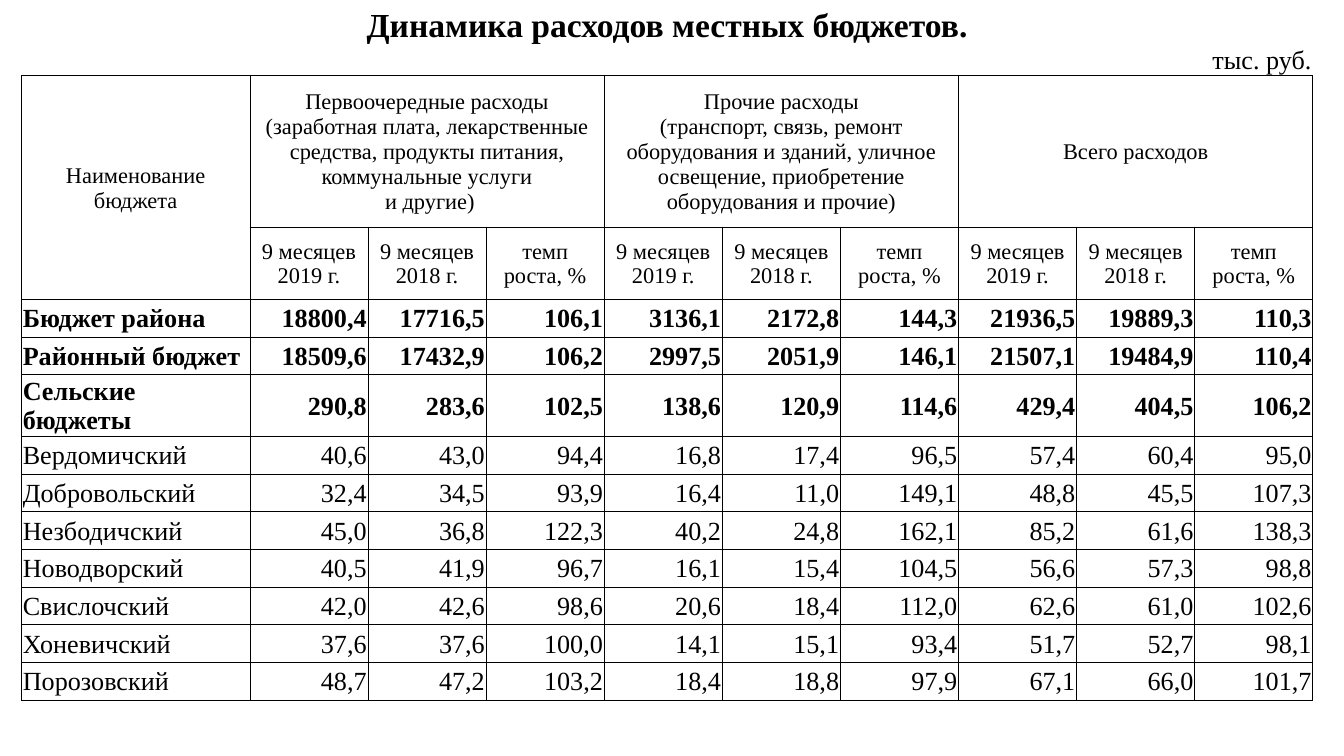
"""Build a slide with a table of local budget spending."""
from lxml import etree
from pptx import Presentation
from pptx.dml.color import RGBColor
from pptx.enum import text
from pptx.oxml import ns
from pptx.util import Inches, Pt

COLORS = {"ink": "000000"}
FONT = "Times New Roman"
TITLE = "Динамика расходов местных бюджетов."
UNITS = "тыс. руб."
NAME_HEADING = "Наименование бюджета"
GROUPS = [
    "Первоочередные расходы (заработная плата, лекарственные средства, "
    "продукты питания, коммунальные услуги\n и другие)",
    "Прочие расходы\n(транспорт, связь, ремонт оборудования и зданий, "
    "уличное освещение, приобретение оборудования и прочие)",
    "Всего расходов",
]
MEASURES = ["9 месяцев 2019 г.", "9 месяцев 2018 г.", "темп\nроста, %"]
TOTALS = [
    ("Бюджет района", "18800,4 17716,5 106,1 3136,1 2172,8 144,3 21936,5 19889,3 110,3"),
    ("Районный бюджет", "18509,6 17432,9 106,2 2997,5 2051,9 146,1 21507,1 19484,9 110,4"),
    ("Сельские бюджеты", "290,8 283,6 102,5 138,6 120,9 114,6 429,4 404,5 106,2"),
]
VILLAGES = [
    ("Вердомичский", "40,6 43,0 94,4 16,8 17,4 96,5 57,4 60,4 95,0"),
    ("Добровольский", "32,4 34,5 93,9 16,4 11,0 149,1 48,8 45,5 107,3"),
    ("Незбодичский", "45,0 36,8 122,3 40,2 24,8 162,1 85,2 61,6 138,3"),
    ("Новодворский", "40,5 41,9 96,7 16,1 15,4 104,5 56,6 57,3 98,8"),
    ("Свислочский", "42,0 42,6 98,6 20,6 18,4 112,0 62,6 61,0 102,6"),
    ("Хоневичский", "37,6 37,6 100,0 14,1 15,1 93,4 51,7 52,7 98,1"),
    ("Порозовский", "48,7 47,2 103,2 18,4 18,8 97,9 67,1 66,0 101,7"),
]
SLIDE_WIDTH = Inches(10)
SLIDE_HEIGHT = SLIDE_WIDTH * 9 // 16
TABLE_WIDTH = Inches(9.61)
NAME_WIDTH = Inches(1.7)
COLUMN_COUNT = 1 + len(GROUPS) * len(MEASURES)
VALUE_WIDTH = (TABLE_WIDTH - NAME_WIDTH) // (COLUMN_COUNT - 1)
COLUMN_WIDTHS = [NAME_WIDTH] + [VALUE_WIDTH] * (COLUMN_COUNT - 1)
ROW_HEIGHTS = [0.3, 0.23, 1.13, 0.54, 0.28, 0.28, 0.46] + [0.28] * len(VILLAGES)
TITLE_ROW, UNITS_ROW, GROUP_ROW, MEASURE_ROW, FIRST_DATA_ROW = range(5)
LEFT, CENTER, RIGHT = text.PP_ALIGN.LEFT, text.PP_ALIGN.CENTER, text.PP_ALIGN.RIGHT
MIDDLE, BOTTOM = text.MSO_ANCHOR.MIDDLE, text.MSO_ANCHOR.BOTTOM


def write(cell, content, size=14, bold=False, align=CENTER, anchor=MIDDLE):
    cell.text = content
    cell.vertical_anchor = anchor
    for paragraph in cell.text_frame.paragraphs:
        paragraph.alignment = align
        for run in paragraph.runs:
            run.font.name = FONT
            run.font.size = Pt(size)
            run.font.bold = bold
            run.font.color.rgb = RGBColor.from_string(COLORS["ink"])


def draw_borders(cell, sides):
    properties = cell._tc.get_or_add_tcPr()
    for position, side in enumerate(sides):
        line = etree.Element(ns.qn(f"a:ln{side}"), w=str(Pt(0.5)))
        fill = etree.SubElement(line, ns.qn("a:solidFill"))
        etree.SubElement(fill, ns.qn("a:srgbClr"), val=COLORS["ink"])
        properties.insert(position, line)


def prepare_cells(table):
    for row_index, row in enumerate(table.rows):
        for cell in row.cells:
            cell.margin_left = cell.margin_right = cell.margin_top = Inches(0.01)
            cell.margin_bottom = 0
            cell.fill.background()
            if row_index >= GROUP_ROW:
                draw_borders(cell, "LRTB")
            elif row_index == UNITS_ROW:
                draw_borders(cell, "B")


def fill_headings(table):
    last = COLUMN_COUNT - 1
    table.cell(TITLE_ROW, 0).merge(table.cell(TITLE_ROW, last))
    write(table.cell(TITLE_ROW, 0), TITLE, size=18, bold=True, anchor=BOTTOM)

    for column in (1, 3, 5):
        table.cell(UNITS_ROW, column).merge(table.cell(UNITS_ROW, column + 1))
    for column in range(last):
        paragraph = table.cell(UNITS_ROW, column).text_frame.paragraphs[0]
        etree.SubElement(paragraph._p, ns.qn("a:endParaRPr"), sz="1000")
    write(table.cell(UNITS_ROW, last), UNITS, align=RIGHT, anchor=BOTTOM)

    table.cell(GROUP_ROW, 0).merge(table.cell(MEASURE_ROW, 0))
    write(table.cell(GROUP_ROW, 0), NAME_HEADING, size=12)
    for group_index, group in enumerate(GROUPS):
        start = 1 + group_index * len(MEASURES)
        end = start + len(MEASURES) - 1
        table.cell(GROUP_ROW, start).merge(table.cell(GROUP_ROW, end))
        write(table.cell(GROUP_ROW, start), group, size=12)
        for column, measure in enumerate(MEASURES, start):
            write(table.cell(MEASURE_ROW, column), measure, size=12)


def fill_data(table):
    for row, (name, values) in enumerate(TOTALS + VILLAGES, FIRST_DATA_ROW):
        bold = row < FIRST_DATA_ROW + len(TOTALS)
        write(table.cell(row, 0), name, bold=bold, align=LEFT)
        for column, value in enumerate(values.split(), 1):
            write(table.cell(row, column), value, bold=bold, align=RIGHT)


def main():
    presentation = Presentation()
    presentation.slide_width = SLIDE_WIDTH
    presentation.slide_height = SLIDE_HEIGHT
    slide = presentation.slides.add_slide(presentation.slide_layouts[6])
    table = slide.shapes.add_table(
        len(ROW_HEIGHTS), COLUMN_COUNT, Inches(0.16), Inches(0.03),
        TABLE_WIDTH, Inches(sum(ROW_HEIGHTS)),
    ).table
    table.first_row = table.horz_banding = False
    for column, width in zip(table.columns, COLUMN_WIDTHS):
        column.width = width
    for row, height in zip(table.rows, ROW_HEIGHTS):
        row.height = Inches(height)
    prepare_cells(table)
    fill_headings(table)
    fill_data(table)
    presentation.save("out.pptx")


if __name__ == "__main__":
    main()
